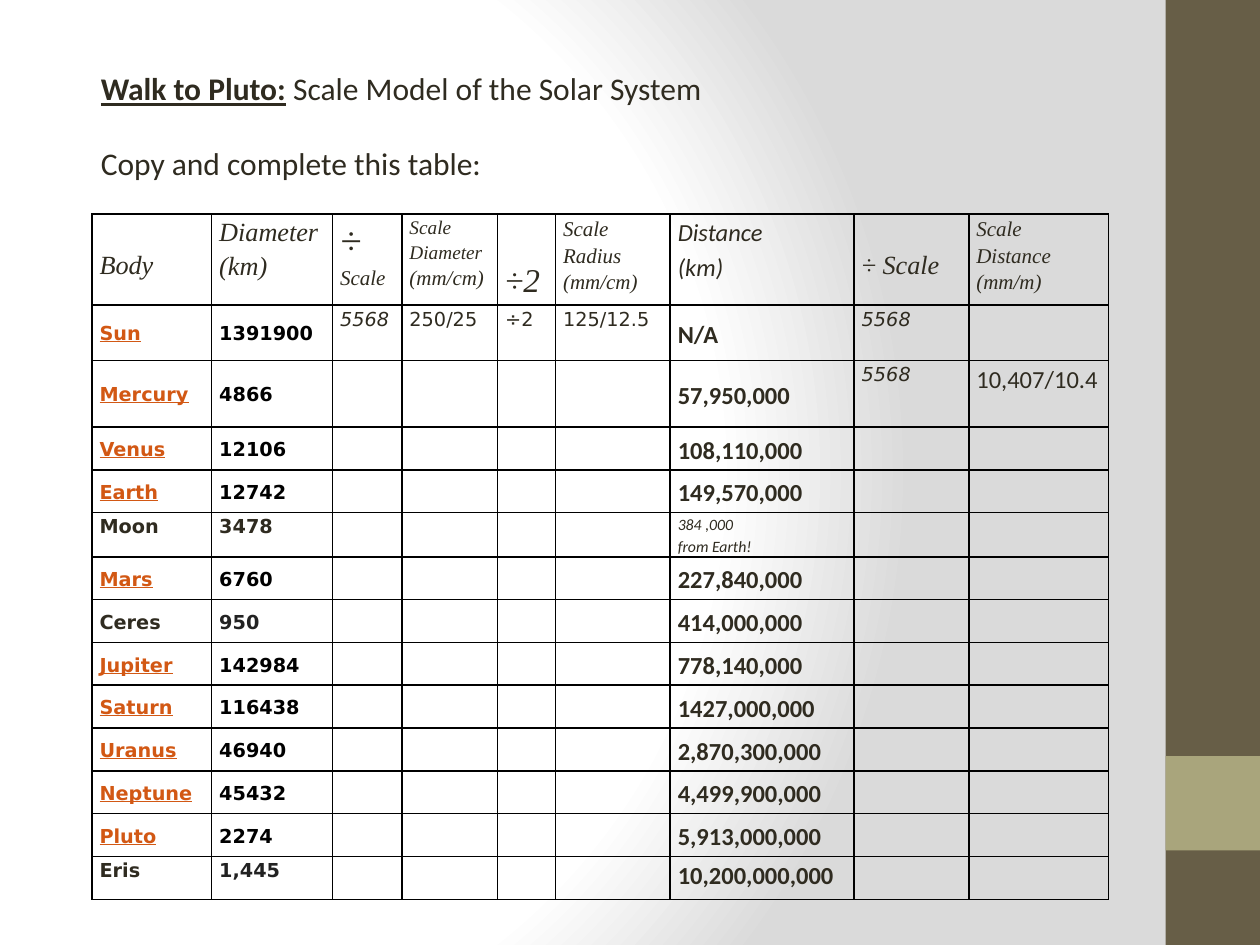
import lxml.etree
import pptx
import pptx.dml.color
import pptx.enum.shapes
import pptx.enum.text
import pptx.oxml
import pptx.oxml.ns
import pptx.util

RGB = pptx.dml.color.RGBColor
INK = RGB(0x2F, 0x2B, 0x20)
GREY = RGB(0x22, 0x22, 0x22)
BLACK = RGB(0, 0, 0)
LINK = RGB(0xD2, 0x58, 0x14)
BROWN = RGB(0x67, 0x5E, 0x47)
OLIVE = RGB(0xA9, 0xA5, 0x7C)

SANS, SERIF, WIDE = "Calibri", "Times New Roman", "DejaVu Sans"
TOP = pptx.enum.text.MSO_ANCHOR.TOP
MID = pptx.enum.text.MSO_ANCHOR.MIDDLE
A_NS = "http://schemas.openxmlformats.org/drawingml/2006/main"

# Content: header cells as (top inset, font, lines of (text, size))
HEADS = [
    (0.26, SERIF, [("Body", 15)]),
    (0, SERIF, [("Diameter", 15), ("(km)", 15)]),
    (0, SERIF, [("÷", 22), ("Scale", 12)]),
    (0, SERIF, [("Scale Diameter", 11), ("(mm/cm)", 12)]),
    (0.34, SERIF, [("÷2", 19)]),
    (0, SERIF, [("Scale Radius", 12), ("(mm/cm)", 12)]),
    (0, SANS, [("Distance", 14), ("(km)", 14)]),
    (0.26, SERIF, [("÷ Scale", 15)]),
    (0, SERIF, [("Scale Distance (mm/m)", 12)]),
]
BODIES = [
    ("Sun", "1391900", "N/A"),
    ("Mercury", "4866", "57,950,000"),
    ("Venus", "12106", "108,110,000"),
    ("Earth", "12742", "149,570,000"),
    ("Moon", "3478", "384 ,000\nfrom Earth!"),
    ("Mars", "6760", "227,840,000"),
    ("Ceres", "950", "414,000,000"),
    ("Jupiter", "142984", "778,140,000"),
    ("Saturn", "116438", "1427,000,000"),
    ("Uranus", "46940", "2,870,300,000"),
    ("Neptune", "45432", "4,499,900,000"),
    ("Pluto", "2274", "5,913,000,000"),
    ("Eris", "1,445", "10,200,000,000"),
]
PLAIN = {"Moon": INK, "Ceres": GREY, "Eris": GREY}  # unlinked: diameter colour
HIGH = ("Moon", "Eris")  # rows set at the top of their cells
WORKED = {  # (row, column): text and format
    (1, 2): ("5568", dict(italic=True)),
    (1, 3): ("250/25", {}),
    (1, 4): ("÷2", {}),
    (1, 5): ("125/12.5", {}),
    (1, 7): ("5568", dict(italic=True)),
    (2, 7): ("5568", dict(italic=True)),
    (2, 8): ("10,407/10.4", dict(size=14, font=SANS)),
}
COLS = [0.95, 0.96, 0.55, 0.76, 0.46, 0.91, 1.46, 0.91, 1.11]
ROWS = [0.72, 0.44, 0.53] + [0.34] * 11
ROWS[6 - 1] = 0.35


def put(para, text, size=11, font=WIDE, color=INK,
        bold=False, italic=False, under=False):
    run = para.add_run()
    run.text = text
    face = run.font
    face.size, face.name = pptx.util.Pt(size), font
    face.bold, face.italic, face.underline = bold, italic, under
    face.color.rgb = color


def fill_cell(cell, lines, top=0, anchor=TOP, **form):
    """Write lines of (text, size) into a table cell."""
    cell.margin_top = pptx.util.Inches(top)
    cell.vertical_anchor = anchor
    frame = cell.text_frame
    for i, (text, size) in enumerate(lines):
        para = frame.add_paragraph() if i else frame.paragraphs[0]
        para.line_spacing = 1.15
        put(para, text, size=size, **form)


def frame_cell(cell):
    """Clear the fill and margins of a cell and rule all four sides."""
    cell.margin_left = cell.margin_right = pptx.util.Inches(0.06)
    cell.margin_top = cell.margin_bottom = 0
    props = cell._tc.get_or_add_tcPr()
    for side in ("lnL", "lnR", "lnT", "lnB"):
        props.append(pptx.oxml.parse_xml(
            f'<a:{side} xmlns:a="{A_NS}" w="12700"><a:solidFill>'
            f'<a:srgbClr val="{BLACK}"/></a:solidFill></a:{side}>'))
    cell.fill.background()


def paint_back(slide):
    """Give the slide a round gradient from white to light grey."""
    slide.background.fill.gradient()
    old = next(slide.element.iter(pptx.oxml.ns.qn("a:gradFill")))
    stops = "".join(
        f'<a:gs pos="{pos}000"><a:srgbClr val="{tone}"/></a:gs>'
        for pos, tone in [(0, "FFFFFF"), (75, "FFFFFF"), (100, "DADADA")])
    new = lxml.etree.tostring(lxml.etree.fromstring(
        f'<a:gradFill xmlns:a="{A_NS}" rotWithShape="1">'
        f'<a:gsLst>{stops}</a:gsLst><a:path path="circle">'
        '<a:fillToRect l="20000" t="50000" r="100000" b="50000"/>'
        '</a:path></a:gradFill>'))
    old.getparent().replace(old, pptx.oxml.parse_xml(new))


def main():
    inch = pptx.util.Inches
    deck = pptx.Presentation()
    deck.slide_width, deck.slide_height = inch(10), inch(7.5)
    slide = deck.slides.add_slide(deck.slide_layouts[5])
    paint_back(slide)

    # Side bands
    for top, high, tone in [(0, 7.5, BROWN), (6, 0.75, OLIVE)]:
        band = slide.shapes.add_shape(
            pptx.enum.shapes.MSO_SHAPE.RECTANGLE,
            inch(9.25), inch(top), inch(0.75), inch(high))
        band.shadow.inherit = False
        band.fill.solid()
        band.fill.fore_color.rgb = tone
        band.line.fill.background()

    # Title and task
    title = slide.shapes.title
    title.left, title.top = inch(0.7), inch(0.5)
    title.width, title.height = inch(5), inch(1.01)
    frame = title.text_frame
    frame.word_wrap = True
    frame.auto_size = pptx.enum.text.MSO_AUTO_SIZE.NONE
    frame.vertical_anchor = TOP
    head, task = frame.paragraphs[0], frame.add_paragraph()
    put(head, "Walk to Pluto:", size=18, font=SANS, bold=True, under=True)
    put(head, " Scale Model of the Solar System", size=18, font=SANS)
    put(task, "Copy and complete this table:", size=18, font=SANS)
    for para in (head, task):
        para.alignment = pptx.enum.text.PP_ALIGN.LEFT
        para.space_before = pptx.util.Pt(0)
    head.space_after = pptx.util.Pt(21)

    # Table grid
    table = slide.shapes.add_table(
        len(ROWS), len(COLS), inch(0.73), inch(1.7),
        inch(sum(COLS)), inch(sum(ROWS))).table
    table.first_row = table.horz_banding = False
    for col, wide in zip(table.columns, COLS):
        col.width = inch(wide)
    for row, high in zip(table.rows, ROWS):
        row.height = inch(high)
    for cell in table.iter_cells():
        frame_cell(cell)

    # Table text
    for col, (top, font, lines) in enumerate(HEADS):
        fill_cell(table.cell(0, col), lines, top=top, font=font, italic=True)
    for row, (name, wide, far) in enumerate(BODIES, 1):
        link = name not in PLAIN
        note = "\n" in far
        spot = TOP if name in HIGH else MID
        fill_cell(table.cell(row, 0), [(name, 11)], anchor=spot, bold=True,
                  color=LINK if link else INK, under=link)
        fill_cell(table.cell(row, 1), [(wide, 11)], anchor=spot, bold=True,
                  color=PLAIN.get(name, BLACK))
        fill_cell(table.cell(row, 6),
                  [(line, 9 if note else 14) for line in far.split("\n")],
                  anchor=spot, font=SANS, bold=not note, italic=note)
    for (row, col), (text, form) in WORKED.items():
        form = dict(form)
        fill_cell(table.cell(row, col), [(text, form.pop("size", 11))], **form)

    deck.save("out.pptx")


if __name__ == "__main__":
    main()
